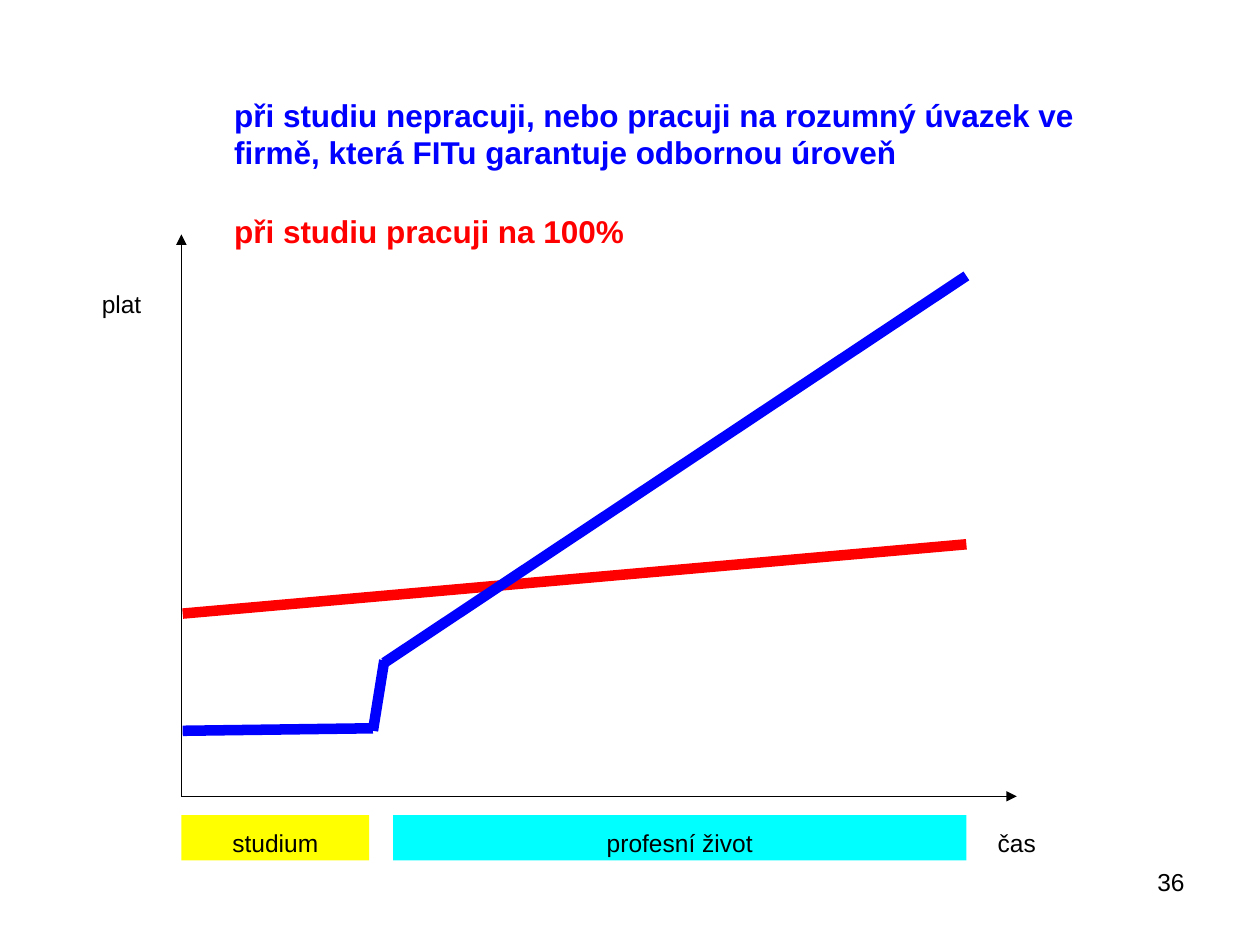
from dataclasses import dataclass

from lxml.etree import SubElement
from pptx import Presentation
from pptx.dml.color import RGBColor
from pptx.enum.shapes import MSO_CONNECTOR as Connector, MSO_SHAPE as Shape
from pptx.enum.text import MSO_ANCHOR as Anchor, PP_ALIGN as Align
from pptx.oxml.ns import qn
from pptx.slide import Slide
from pptx.util import Inches, Pt

COLORS = {
    "ink": "000000",
    "study_first": "0000FF",
    "full_time": "FF0000",
    "study": "FFFF00",
    "career": "00FFFF",
}
FONT = "Arial"

# Plot frame, in inches
ORIGIN_X, ORIGIN_Y = 1.44, 6.32
AXIS_END_X, AXIS_END_Y = 8.07, 1.86
CURVE_START, CURVE_END = 1.45, 7.67
LABEL_HEIGHT = 0.36
PHASE_TOP = ORIGIN_Y + 0.15
CAREER_START = 3.12
HEADING_LEFT, HEADING_WIDTH, HEADING_HEIGHT = 1.76, 7.53, 0.74


@dataclass(frozen=True)
class Label:
    text: str
    left: float
    top: float
    width: float
    height: float = LABEL_HEIGHT
    color: str = "ink"
    size: int = 14
    bold: bool = False
    align: Align = Align.LEFT
    fill: str | None = None
    inset: float = 0.1


@dataclass(frozen=True)
class Segment:
    start: tuple[float, float]
    end: tuple[float, float]
    color: str = "ink"
    weight: float = 0.75
    arrow: bool = False


def rgb(name: str) -> RGBColor:
    return RGBColor.from_string(COLORS[name])


def draw_label(slide: Slide, label: Label) -> None:
    frame = [Inches(v) for v in (label.left, label.top, label.width, label.height)]
    if label.fill:
        box = slide.shapes.add_shape(Shape.RECTANGLE, *frame)
        box.shadow.inherit = False
        box.fill.solid()
        box.fill.fore_color.rgb = rgb(label.fill)
        box.line.fill.background()
    else:
        box = slide.shapes.add_textbox(*frame)

    text = box.text_frame
    text.text = label.text
    text.word_wrap = True
    text.vertical_anchor = Anchor.TOP
    text.margin_left = text.margin_right = Inches(0.1)
    text.margin_top = text.margin_bottom = Inches(label.inset)
    paragraph = text.paragraphs[0]
    paragraph.alignment = label.align
    font = paragraph.runs[0].font
    font.name, font.size, font.bold = FONT, Pt(label.size), label.bold
    font.color.rgb = rgb(label.color)


def draw_segment(slide: Slide, segment: Segment) -> None:
    ends = [Inches(v) for v in (*segment.start, *segment.end)]
    connector = slide.shapes.add_connector(Connector.STRAIGHT, *ends)
    connector.line.color.rgb = rgb(segment.color)
    connector.line.width = Pt(segment.weight)
    if segment.arrow:
        SubElement(connector.line._get_or_add_ln(), qn("a:tailEnd"), type="triangle")
    SubElement(connector._element.spPr, qn("a:effectLst"))


AXES = [
    Segment((ORIGIN_X, ORIGIN_Y), (AXIS_END_X, ORIGIN_Y), arrow=True),
    Segment((ORIGIN_X, ORIGIN_Y), (ORIGIN_X, AXIS_END_Y), arrow=True),
]

CURVES = [
    Segment(start, end, color, 6)
    for color, start, end in [
        ("full_time", (CURVE_START, 4.87), (CURVE_END, 4.32)),
        ("study_first", (CURVE_START, 5.8), (2.96, 5.78)),
        ("study_first", (2.96, 5.8), (3.05, 5.24)),
        ("study_first", (3.05, 5.26), (CURVE_END, 2.19)),
    ]
]

AXIS_LABELS = [
    Label("čas", 7.82, PHASE_TOP, 1.3),
    Label("plat", 0.71, 2.19, 0.8),
]

PHASES = [
    Label("studium", ORIGIN_X, PHASE_TOP, 1.49, align=Align.CENTER, fill="study"),
    Label("profesní život", CAREER_START, PHASE_TOP, CURVE_END - CAREER_START,
          align=Align.CENTER, fill="career"),
]

HEADINGS = [
    Label(text, HEADING_LEFT, top, HEADING_WIDTH, HEADING_HEIGHT, color, 18, True)
    for text, top, color in [
        ("při studiu nepracuji, nebo pracuji na rozumný úvazek ve firmě, "
         "která FITu garantuje odbornou úroveň", 0.66, "study_first"),
        ("při studiu pracuji na 100%", 1.58, "full_time"),
    ]
]

PAGE_NUMBER = Label("36", 7.17, 6.83, 2.33, 0.52, align=Align.RIGHT, inset=0.05)


def main() -> None:
    deck = Presentation()
    deck.slide_width, deck.slide_height = Inches(10), Inches(7.5)
    slide = deck.slides.add_slide(deck.slide_layouts[6])

    # Page number and axes
    draw_label(slide, PAGE_NUMBER)
    for axis in AXES:
        draw_segment(slide, axis)

    # Axis names and life phases
    for label in AXIS_LABELS + PHASES:
        draw_label(slide, label)

    # Salary curves, then the headings that explain them
    for curve in CURVES:
        draw_segment(slide, curve)
    for heading in HEADINGS:
        draw_label(slide, heading)

    deck.save("out.pptx")


if __name__ == "__main__":
    main()
